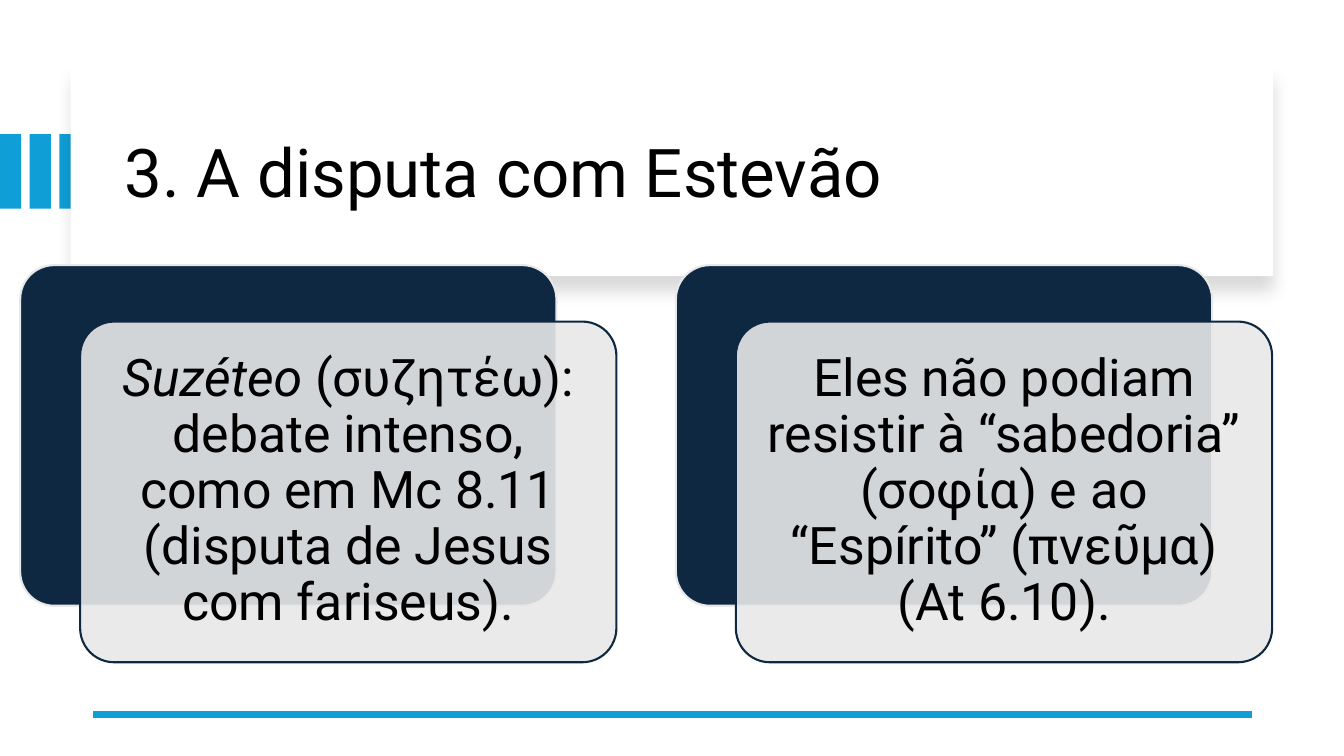
"""Build the slide on the dispute with Stephen: a title card and two layered text cards."""
import pptx
import pptx.dml.color
import pptx.enum.shapes
import pptx.enum.text
import pptx.oxml.ns
import pptx.util
from lxml import etree

Inches = pptx.util.Inches
Pt = pptx.util.Pt
qn = pptx.oxml.ns.qn
SHAPES = pptx.enum.shapes.MSO_SHAPE
ALIGN = pptx.enum.text.PP_ALIGN

TITLE = [("3. A disputa com Estevão", False)]
CARDS = [
    [("Suzéteo", True),
     (" (συζητέω): debate intenso, como em Mc 8.11 (disputa de Jesus com fariseus).", False)],
    [("Eles não podiam resistir à “sabedoria” (σοφία) e ao “Espírito” (πνεῦμα) (At 6.10).", False)],
]
FONT = "Roboto"
BLUE, NAVY, GREY, WHITE, BLACK = "0F9ED5", "0E2841", "E8E8E8", "FFFFFF", "000000"

BAR_COUNT, BAR_STEP = 3, 0.295
CARD_LEFT, CARD_TOP, CARD_STEP = 0.2, 2.63, 6.505
CARD_WIDTH, CARD_HEIGHT = 5.32, 3.38
FRONT_RIGHT, FRONT_DOWN = 0.595, 0.56
TEXT_MARGIN = 0.1


def color(hex_text):
    return pptx.dml.color.RGBColor.from_string(hex_text)


def add_block(page, kind, left, top, width, height, fill, line=None):
    block = page.shapes.add_shape(kind, Inches(left), Inches(top), Inches(width), Inches(height))
    block.shadow.inherit = False
    block.fill.solid()
    block.fill.fore_color.rgb = color(fill)
    if line:
        block.line.color.rgb = color(line)
        block.line.width = Pt(1.5)
    else:
        block.line.fill.background()
    return block


def add_card(page, left, top, fill, line):
    card = add_block(page, SHAPES.ROUNDED_RECTANGLE, left, top, CARD_WIDTH, CARD_HEIGHT, fill, line)
    card.adjustments[0] = 0.1
    return card


def set_alpha(color_element, percent):
    etree.SubElement(color_element, qn("a:alpha"), val=str(percent * 1000))


def add_soft_shadow(block):
    effects = block.element.spPr.find(qn("a:effectLst"))
    shadow = etree.SubElement(effects, qn("a:outerShdw"), blurRad=str(Pt(11)), dist=str(Pt(10)),
                              dir="5400000", algn="t", rotWithShape="0")
    set_alpha(etree.SubElement(shadow, qn("a:srgbClr"), val=BLACK), 15)


def add_text(page, left, top, width, height, spans, size, align, inset_x, inset_y):
    box = page.shapes.add_textbox(Inches(left), Inches(top), Inches(width), Inches(height))
    frame = box.text_frame
    frame.word_wrap = True
    frame.vertical_anchor = pptx.enum.text.MSO_ANCHOR.MIDDLE
    frame.margin_left = frame.margin_right = Inches(inset_x)
    frame.margin_top = frame.margin_bottom = Inches(inset_y)
    para = frame.paragraphs[0]
    para.alignment = align
    para.line_spacing = 0.9
    for words, italic in spans:
        span = para.add_run()
        span.text = words
        span.font.name = FONT
        span.font.size = Pt(size)
        span.font.italic = italic
        span.font.color.rgb = color(BLACK)


def main():
    deck = pptx.Presentation()
    deck.slide_width, deck.slide_height = Inches(13.333), Inches(7.5)
    page = deck.slides.add_slide(deck.slide_layouts[6])

    for index in range(BAR_COUNT):
        add_block(page, SHAPES.RECTANGLE, index * BAR_STEP, 1.33, 0.21, 0.74, BLUE)
    add_soft_shadow(add_block(page, SHAPES.RECTANGLE, 0.7, 0.67, 11.93, 2.07, WHITE))
    add_text(page, 1.14, 0.89, 11.13, 1.7, TITLE, 48, ALIGN.LEFT, 0.1, 0.05)

    rule = page.shapes.add_connector(pptx.enum.shapes.MSO_CONNECTOR.STRAIGHT,
                                     Inches(12.42), Inches(7.09), Inches(0.92), Inches(7.09))
    rule.line.color.rgb = color(BLUE)
    rule.line.width = Pt(4.5)
    etree.SubElement(rule.element.spPr, qn("a:effectLst"))

    for index, spans in enumerate(CARDS):
        left = CARD_LEFT + index * CARD_STEP
        add_card(page, left, CARD_TOP, NAVY, GREY)
        front_left, front_top = left + FRONT_RIGHT, CARD_TOP + FRONT_DOWN
        front = add_card(page, front_left, front_top, GREY, NAVY)
        set_alpha(front.element.spPr.find(qn("a:solidFill")).find(qn("a:srgbClr")), 90)
        add_text(page, front_left + TEXT_MARGIN, front_top + TEXT_MARGIN,
                 CARD_WIDTH - 2 * TEXT_MARGIN, CARD_HEIGHT - 2 * TEXT_MARGIN,
                 spans, 37, ALIGN.CENTER, 0.15, 0.15)

    deck.save("out.pptx")


if __name__ == "__main__":
    main()
